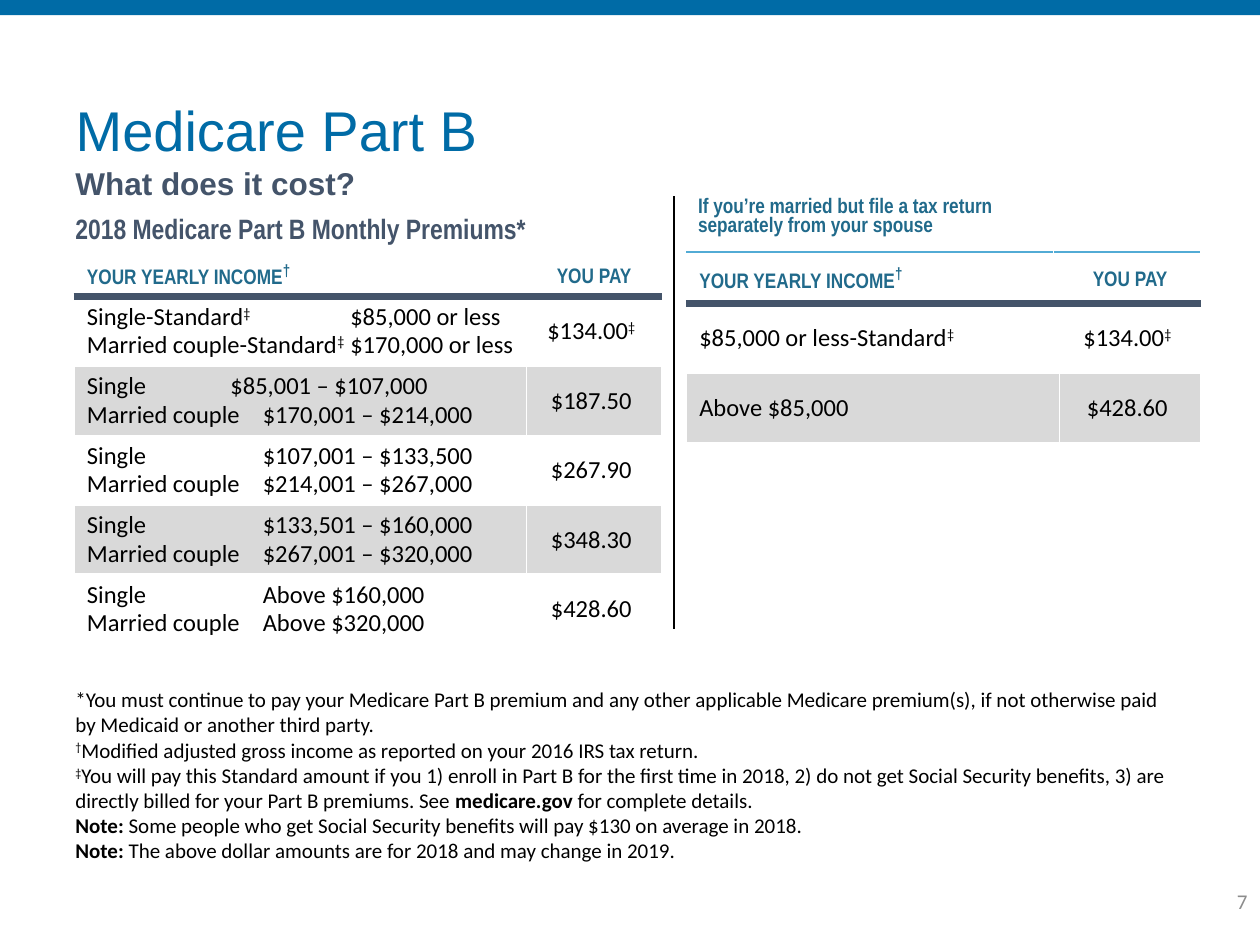
import itertools

import pptx
import pptx.dml.color
import pptx.enum.shapes
import pptx.enum.text
import pptx.oxml.ns
import pptx.util
from lxml import etree

Pt = pptx.util.Pt
qn = pptx.oxml.ns.qn
ALIGN = pptx.enum.text.PP_ALIGN
ANCHOR = pptx.enum.text.MSO_ANCHOR
HEX = {"blue": "006BA6", "slate": "44546A", "teal": "216A8B", "sky": "52ABD5",
       "band": "D9D9D9", "white": "FFFFFF", "black": "000000", "grey": "8C8C8C"}

TITLE = {"name": "Arial", "size": 32, "color": "blue"}
SUB = {"name": "Arial", "size": 18, "color": "slate", "bold": True}
LEAD = {"name": "Arial Narrow", "size": 16, "color": "slate", "bold": True}
HEAD = {"name": "Arial Narrow", "size": 12, "color": "teal", "bold": True}
BODY = {"name": "Calibri", "size": 14, "color": "black", "bold": False}
NOTE = {"name": "Calibri", "size": 12, "color": "black", "bold": False}
PAGE = {"name": "Calibri", "size": 12, "color": "grey"}

HEADS = ("YOUR YEARLY INCOME†", "YOU PAY")
JOINT = [
    ("Single-Standard‡\t$85,000 or less\nMarried couple-Standard‡\t$170,000 or less",
     "$134.00‡ ", (150.5,)),
    ("Single\t$85,001 – $107,000\nMarried couple\t$170,001 – $214,000", "$187.50 ", (82, 100.5)),
    ("Single\t$107,001 – $133,500\nMarried couple\t$214,001 – $267,000", "$267.90 ", (100.5,)),
    ("Single\t$133,501 – $160,000\nMarried couple\t$267,001 – $320,000", "$348.30 ", (100.5,)),
    ("Single\tAbove $160,000\nMarried couple\tAbove $320,000", "$428.60 ", (100.5,)),
]
APART = [("$85,000 or less-Standard‡", "$134.00‡ ", ()),
         ("Above $85,000", "$428.60 ", ()),
         ("", "", ())]
# Text between bars is bold
NOTES = [
    "*You must continue to pay your Medicare Part B premium and any other applicable "
    "Medicare premium(s), if not otherwise paid by Medicaid or another third party.",
    "†Modified adjusted gross income as reported on your 2016 IRS tax return.",
    "‡You will pay this Standard amount if you 1) enroll in Part B for the first time in 2018, "
    "2) do not get Social Security benefits, 3) are directly billed for your Part B premiums. "
    "See |medicare.gov| for complete details.",
    "|Note: |Some people who get Social Security benefits will pay $130 on average in 2018.",
    "|Note:| The above dollar amounts are for 2018 and may change in 2019.",
]


def tint(name):
    return pptx.dml.color.RGBColor.from_string(HEX[name])


def style(font, form):
    for key, val in form.items():
        if key == "color":
            font.color.rgb = tint(val)
        else:
            setattr(font, key, Pt(val) if key == "size" else val)


def kind(char):
    return "dagger" if char in "†‡" else "break" if char == "\n" else "text"


def write(par, text, form, align=ALIGN.LEFT, space=None, tabs=(), dag=None):
    """Write text with raised daggers, line breaks and bold parts."""
    par.alignment = align
    if space:
        par.line_spacing = space
    if tabs:
        stops = etree.SubElement(par._p.get_or_add_pPr(), qn("a:tabLst"))
        for stop in tabs:
            etree.SubElement(stops, qn("a:tab"), pos=str(int(Pt(stop))), algn="l")
    for turn, piece in enumerate(text.split("|")):
        for sort, chars in itertools.groupby(piece, kind):
            if sort == "break":
                par.add_line_break()
                etree.SubElement(par._p[-1], qn("a:rPr"), sz=str(form["size"] * 100))
                continue
            run = par.add_run()
            run.text = "".join(chars)
            style(run.font, form)
            if turn % 2:
                run.font.bold = True
            if sort == "dagger":
                run.font._element.set("baseline", "30000")
                run.font.size = Pt(dag or form["size"])


def frame(shape, lines, form, anchor=ANCHOR.TOP, **opts):
    body = shape.text_frame
    body.word_wrap = True
    body.auto_size = pptx.enum.text.MSO_AUTO_SIZE.NONE
    body.vertical_anchor = anchor
    for num, line in enumerate(lines):
        write(body.add_paragraph() if num else body.paragraphs[0], line, form, **opts)


def label(slide, box, lines, form, **opts):
    frame(slide.shapes.add_textbox(*map(Pt, box)), lines, form, **opts)


def edge(cell, side, name, width):
    line = etree.SubElement(cell._tc.get_or_add_tcPr(), qn("a:ln" + side), w=str(int(Pt(width))))
    fill = etree.SubElement(line, qn("a:solidFill"))
    etree.SubElement(fill, qn("a:srgbClr"), val=HEX[name])


def shade(cell, name):
    if name is None:
        cell.fill.background()
        return
    cell.fill.solid()
    cell.fill.fore_color.rgb = tint(name)
    mark = next(cell._tc.tcPr.iter(qn("a:srgbClr")))
    etree.SubElement(mark, qn("a:alpha"), val="30000")


def grid(slide, left, top, cols, rows):
    shape = slide.shapes.add_table(len(rows), len(cols), Pt(left), Pt(top),
                                   Pt(sum(cols)), Pt(sum(rows)))
    table = shape.table
    table.first_row = table.horz_banding = False
    for col, width in zip(table.columns, cols):
        col.width = Pt(width)
    for row, height in zip(table.rows, rows):
        row.height = Pt(height)
    for cell in table.iter_cells():
        cell.vertical_anchor = ANCHOR.MIDDLE
    return table


def rates(slide, left, top, cols, head, data):
    """Premium table: a header over rows with alternate bands."""
    table = grid(slide, left, top, cols, [head] + [39.7] * len(data))
    for num, (*texts, tabs) in enumerate([(*HEADS, ())] + data):
        for col, text in enumerate(texts):
            cell = table.cell(num, col)
            if num == 0:
                cell.margin_top = cell.margin_bottom = 0
            edge(cell, "T", *(("slate", 4.5) if num == 1 else ("white", 1)))
            edge(cell, "B", *(("slate", 4.5) if num == 0 else ("white", 1)))
            shade(cell, None if num == 0 else "white" if num % 2 else "band")
            write(cell.text_frame.paragraphs[0], text, BODY if num else HEAD,
                  align=ALIGN.CENTER if col else ALIGN.LEFT, space=0.95,
                  tabs=() if col else tabs, dag=None if num else 16)


def banner(slide, left, top, cols, height, text):
    """Caption above the right table, with a thin rule below."""
    table = grid(slide, left, top, cols, [height])
    for cell in table.iter_cells():
        edge(cell, "B", "sky", 1)
        shade(cell, None)
    write(table.cell(0, 0).text_frame.paragraphs[0], text, HEAD, space=0.95)


def header(slide, left, top, width):
    """Top bar, title and the two lines below it."""
    bar = slide.shapes.add_shape(pptx.enum.shapes.MSO_SHAPE.RECTANGLE, 0, 0, Pt(720), Pt(8.64))
    bar.shadow.inherit = False
    bar.fill.solid()
    bar.fill.fore_color.rgb = tint("blue")
    bar.line.fill.background()
    title = slide.shapes.title
    sides = {"left": left, "top": top, "width": width, "height": 45.4}
    for key, val in sides.items():
        setattr(title, key, Pt(val))
    frame(title, ["Medicare Part B"], TITLE, anchor=ANCHOR.MIDDLE, space=0.9)
    label(slide, (left, top + 39.6, width, 26.6), ["What does it cost?"], SUB, space=0.9)
    label(slide, (left, top + 66.2, 292.3, 25.2),
          ["2018 Medicare Part B Monthly Premiums*"], LEAD, space=0.9)


def rule(slide, left, top, foot):
    line = slide.shapes.add_connector(pptx.enum.shapes.MSO_CONNECTOR.STRAIGHT,
                                      Pt(left), Pt(top), Pt(left), Pt(foot))
    line.line.color.rgb = tint("black")
    line.line.width = Pt(0.75)
    etree.SubElement(line._element.spPr, qn("a:effectLst"))


def main():
    deck = pptx.Presentation()
    deck.slide_width, deck.slide_height = Pt(720), Pt(540)
    slide = deck.slides.add_slide(deck.slide_layouts[5])
    header(slide, 36, 53.3, 648)
    # Premium tables
    rates(slide, 42.5, 147.6, (258.5, 77), 21.8, JOINT)
    rates(slide, 392.4, 147.6, (213.1, 80.6), 25.8, APART)
    banner(slide, 391.7, 104.4, (210.2, 84.2), 39.6,
           "If you’re married but file a tax return separately from your spouse")
    rule(slide, 385.2, 112.3, 359.3)
    # Footnotes and page number
    label(slide, (36, 388.1, 643, 108.7), NOTES, NOTE, anchor=ANCHOR.BOTTOM)
    label(slide, (558, 500.4, 162, 28.8), ["7"], PAGE, anchor=ANCHOR.MIDDLE, align=ALIGN.RIGHT)
    deck.save("out.pptx")


if __name__ == "__main__":
    main()
